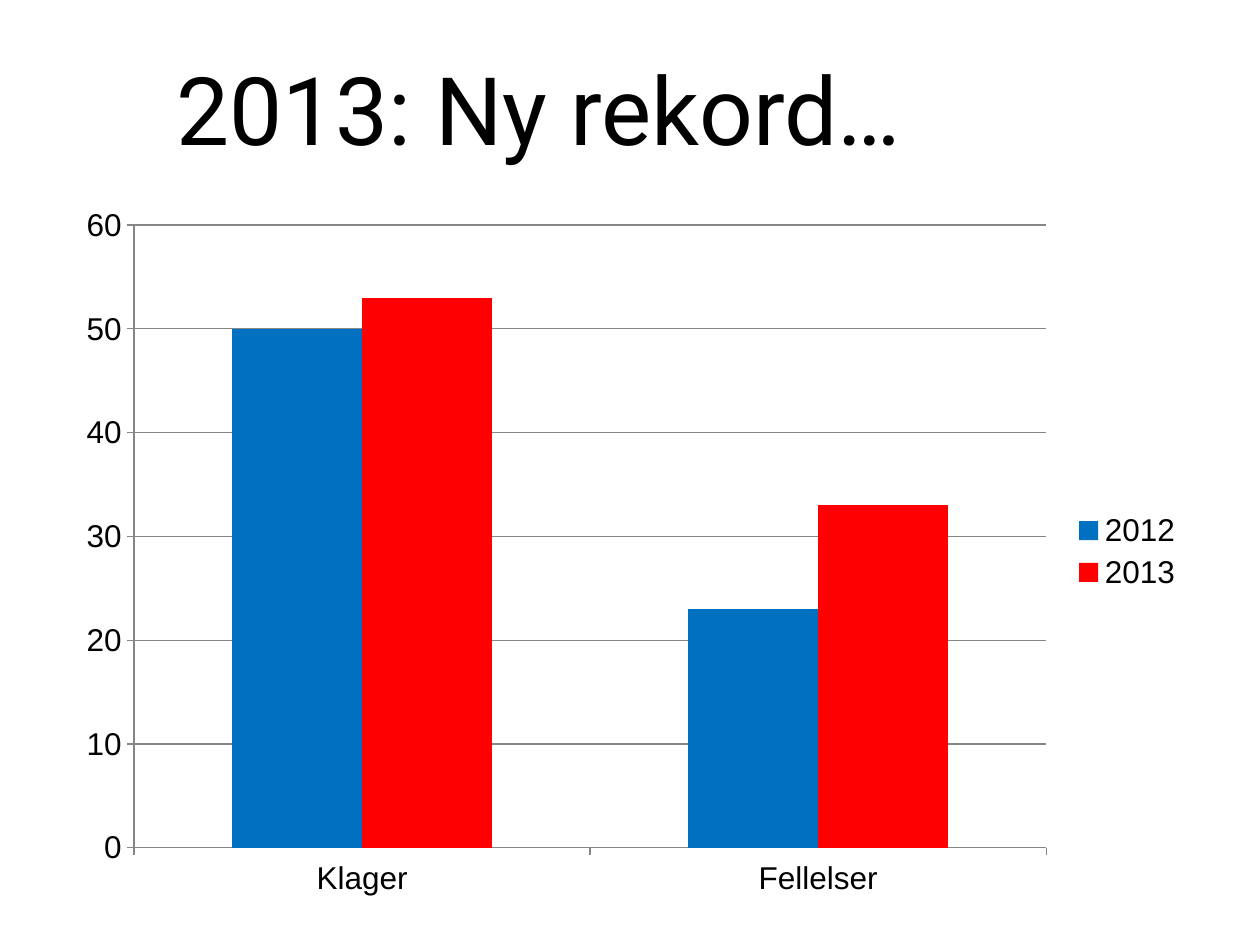
from pptx import Presentation
from pptx.chart.data import CategoryChartData
from pptx.dml.color import RGBColor
from pptx.enum.chart import XL_CHART_TYPE, XL_LEGEND_POSITION, XL_TICK_MARK
from pptx.enum.text import MSO_AUTO_SIZE
from pptx.util import Emu, Pt

PX = 914400 // 126
COLORS = {"text": "000000", "grid": "868686", "2012": "0070C0", "2013": "FF0000"}
CATEGORIES = ["Klager", "Fellelser"]
SERIES = {"2012": [50, 23], "2013": [53, 33]}


def px(n):
    """Turn px into EMU."""
    return Emu(n * PX)


def rgb(name):
    """Look up a named colour."""
    return RGBColor.from_string(COLORS[name])


def style_font(font, name, size):
    """Set the typeface, size and text colour."""
    font.name = name
    font.size = Pt(size)
    font.color.rgb = rgb("text")


def style_line(line):
    """Draw a thin grey chart line."""
    line.color.rgb = rgb("grid")
    line.width = Pt(0.75)


def add_title(s, x, y, w, h):
    """Place the heading in the given box."""
    tf = s.shapes.add_textbox(px(x), px(y), px(w), px(h)).text_frame
    tf.word_wrap = False
    tf.auto_size = MSO_AUTO_SIZE.SHAPE_TO_FIT_TEXT
    tf.text = "2013: Ny rekord…"
    style_font(tf.paragraphs[0].runs[0].font, "Roboto", 54)


def add_record_chart(s, x, y, w, h):
    """Place the clustered column chart in the given box."""
    data = CategoryChartData()
    data.categories = CATEGORIES
    for name, values in SERIES.items():
        data.add_series(name, values)
    chart = s.shapes.add_chart(XL_CHART_TYPE.COLUMN_CLUSTERED,
                               px(x), px(y), px(w), px(h), data).chart
    chart.has_title = False
    style_font(chart.font, "Cambria", 18)

    for axis in (chart.category_axis, chart.value_axis):
        axis.major_tick_mark = XL_TICK_MARK.OUTSIDE
        axis.minor_tick_mark = XL_TICK_MARK.NONE
        style_font(axis.tick_labels.font, "Arial", 18)
        style_line(axis.format.line)
    value_axis = chart.value_axis
    value_axis.minimum_scale, value_axis.maximum_scale = 0, 60
    value_axis.major_unit = 10
    value_axis.has_major_gridlines = True
    style_line(value_axis.major_gridlines.format.line)

    chart.has_legend = True
    chart.legend.position = XL_LEGEND_POSITION.RIGHT
    chart.legend.include_in_layout = False
    style_font(chart.legend.font, "Arial", 18)

    plot = chart.plots[0]
    plot.gap_width = 150
    plot.overlap = 0
    plot.vary_by_categories = False
    for series in plot.series:
        series.invert_if_negative = False
        series.format.fill.solid()
        series.format.fill.fore_color.rgb = rgb(series.name)


def main():
    """Build and save the slide."""
    prs = Presentation()
    prs.slide_width, prs.slide_height = px(1260), px(945)
    s = prs.slides.add_slide(prs.slide_layouts[6])
    add_record_chart(s, 64, 193, 1132, 717)
    add_title(s, 164, 45, 776, 127)
    prs.save("out.pptx")


if __name__ == "__main__":
    main()
